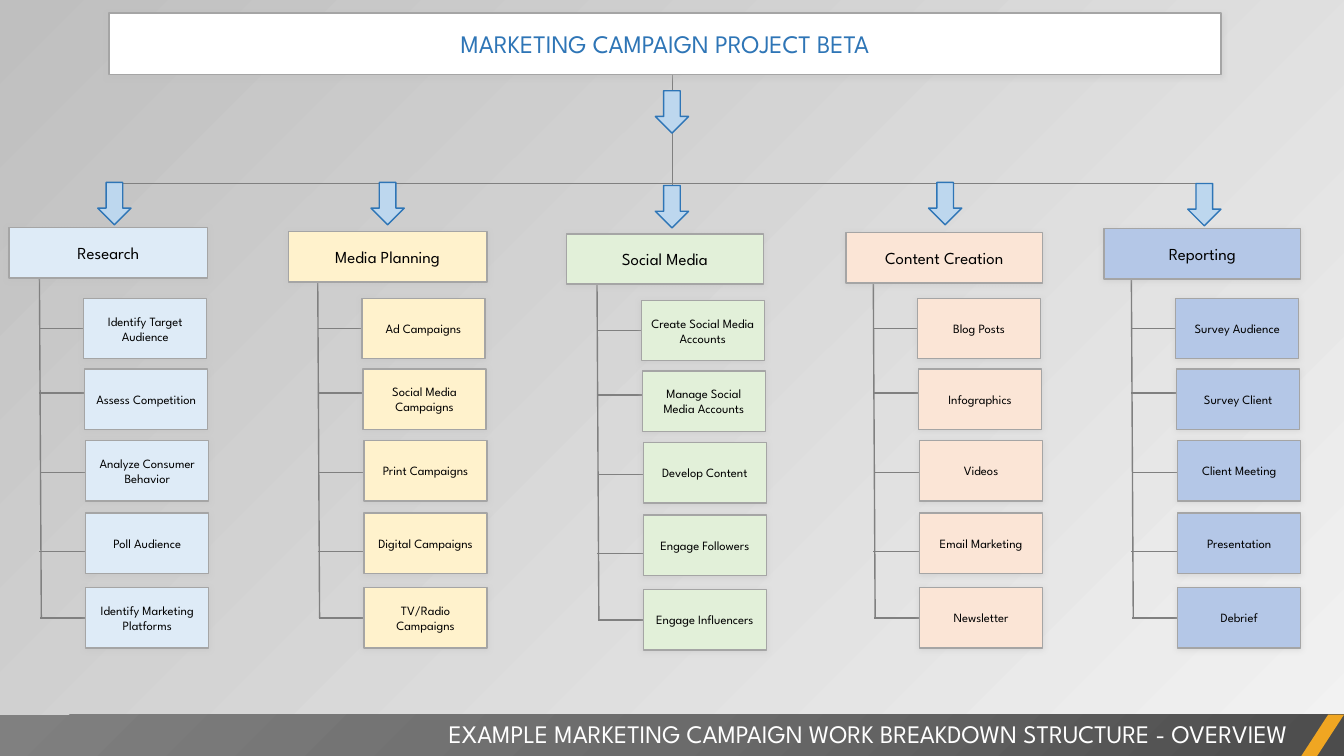
"""Build a work breakdown structure slide for a marketing campaign."""
import pptx
import pptx.dml.color
import pptx.enum.shapes
import pptx.enum.text
import pptx.oxml
import pptx.oxml.ns
import pptx.util

Inches, Pt = pptx.util.Inches, pptx.util.Pt
MSO = pptx.enum.shapes.MSO_SHAPE
ALIGN = pptx.enum.text.PP_ALIGN
ANCHOR = pptx.enum.text.MSO_ANCHOR

TITLE = "MARKETING CAMPAIGN PROJECT BETA"
FOOTER = "EXAMPLE MARKETING CAMPAIGN WORK BREAKDOWN STRUCTURE - OVERVIEW"
FONT = "League Spartan"
GREY, BORDER, BLUE, LIGHT_BLUE = "808080", "A5A5A5", "2E75B6", "BDD7EE"

COLUMNS = [
    dict(name="Research", color="DEEBF7", trunk=0.39, drop=0, head=(0.09, 2.26, 1.97), arrow=(0.97, 1.81),
         tasks=["Identify Target Audience", "Assess Competition", "Analyze Consumer Behavior",
                "Poll Audience", "Identify Marketing Platforms"]),
    dict(name="Media Planning", color="FFF2CC", trunk=3.15, drop=0, head=(2.86, 2.3, 1.97), arrow=(3.68, 1.81),
         tasks=["Ad Campaigns", "Social Media Campaigns", "Print Campaigns",
                "Digital Campaigns", "TV/Radio Campaigns"]),
    dict(name="Social Media", color="E2F0D9", trunk=5.92, drop=0.02, head=(5.62, 2.32, 1.95), arrow=(6.5, 1.84),
         tasks=["Create Social Media Accounts", "Manage Social Media Accounts", "Develop Content",
                "Engage Followers", "Engage Influencers"]),
    dict(name="Content Creation", color="FBE5D6", trunk=8.66, drop=0, head=(8.39, 2.31, 1.95), arrow=(9.21, 1.81),
         tasks=["Blog Posts", "Infographics", "Videos", "Email Marketing", "Newsletter"]),
    dict(name="Reporting", color="B4C7E7", trunk=11.22, drop=0, head=(10.95, 2.27, 1.95), arrow=(11.78, 1.82),
         tasks=["Survey Audience", "Survey Client", "Client Meeting", "Presentation", "Debrief"]),
]
TASK_DX = [0.44, 0.45, 0.46, 0.46, 0.46]
TASK_Y = [2.96, 3.66, 4.37, 5.09, 5.83]
BRANCH_DX = [0, 0, 0.01, 0, 0.01]
BRANCH_Y = [3.26, 3.9, 4.69, 5.47, 6.13]
TRUNK_TOP, TRUNK_LEAN, BRANCH_W = 2.52, 0.02, 0.9
TASK_W, TASK_H, HEAD_H = 1.22, 0.6, 0.5
ARROW_W, ARROW_H = 0.33, 0.42

NS = pptx.oxml.ns.nsdecls("a")
SHADOW = (f'<a:outerShdw {NS} blurRad="50800" dist="12700" dir="5400000" algn="t" rotWithShape="0">'
          '<a:srgbClr val="BFBFBF"><a:alpha val="40000"/></a:srgbClr></a:outerShdw>')
BACK_DIRECTION = '<a:lin ang="13500000" scaled="0"/>'
FOOTER_DIRECTION = '<a:path path="circle"><a:fillToRect l="100000" t="100000"/></a:path>'

prs = pptx.Presentation()
prs.slide_width, prs.slide_height = Inches(13.33), Inches(7.5)
s = prs.slides.add_slide(prs.slide_layouts[6])


def rgb(value):
    return pptx.dml.color.RGBColor.from_string(value)


def gradient(fill, element, stops, direction):
    fill.gradient()
    gs = "".join(f'<a:gs pos="{pos * 1000}"><a:srgbClr val="{color}"><a:alpha val="{alpha * 1000}"/>'
                 "</a:srgbClr></a:gs>" for pos, color, alpha in stops)
    old = element.xpath(".//a:gradFill")[0]
    old.getparent().replace(old, pptx.oxml.parse_xml(
        f'<a:gradFill {NS} rotWithShape="1"><a:gsLst>{gs}</a:gsLst>{direction}</a:gradFill>'))


def line(x1, y1, x2, y2):
    cn = s.shapes.add_connector(pptx.enum.shapes.MSO_CONNECTOR.STRAIGHT, *map(Inches, (x1, y1, x2, y2)))
    cn.line.color.rgb = rgb(GREY)
    cn.line.width = Pt(1)
    cn.element.spPr.append(pptx.oxml.parse_xml(f"<a:effectLst {NS}/>"))


def shape(kind, x, y, w, h, fill, border=None):
    sp = s.shapes.add_shape(kind, *map(Inches, (x, y, w, h)))
    sp.shadow.inherit = False
    sp.fill.solid()
    sp.fill.fore_color.rgb = rgb(fill)
    if border:
        sp.line.color.rgb = rgb(border)
        sp.line.width = Pt(1)
    else:
        sp.line.fill.background()
    return sp


def write(sp, text, size, color, align):
    sp.text_frame.word_wrap = True
    p = sp.text_frame.paragraphs[0]
    p.alignment = align
    r = p.add_run()
    r.text = text
    for key, value in dict(name=FONT, size=Pt(size)).items():
        setattr(r.font, key, value)
    r.font.color.rgb = rgb(color)


def box(x, y, w, h, fill, text, size, color="000000"):
    sp = shape(MSO.RECTANGLE, x, y, w, h, fill, BORDER)
    sp.element.spPr.xpath("a:effectLst")[0].append(pptx.oxml.parse_xml(SHADOW))
    sp.text_frame.vertical_anchor = ANCHOR.MIDDLE
    write(sp, text, size, color, ALIGN.CENTER)


def arrow(x, y):
    shape(MSO.DOWN_ARROW, x, y, ARROW_W, ARROW_H, LIGHT_BLUE, BLUE)


gradient(s.background.fill, s.element, [(0, "F2F2F2", 40), (100, "BFBFBF", 100)], BACK_DIRECTION)

line(6.67, 0.59, 6.67, 1.84)
box(1.08, 0.13, 11.03, 0.61, "FFFFFF", TITLE, 18, BLUE)
line(1.08, 1.82, 11.95, 1.82)
arrow(6.5, 0.9)

band = shape(MSO.RECTANGLE, 0, 7.09, 13.33, 0.42, GREY)
gradient(band.fill, band.element, [(0, "4C4C4C", 100), (50, "6B6B6B", 100), (100, GREY, 100)], FOOTER_DIRECTION)
accent = shape(MSO.PARALLELOGRAM, 12.9, 7.09, 0.43, 0.42, "F0A622")
accent.adjustments[0] = 0.65
footer = s.shapes.add_textbox(*map(Inches, (0.09, 7.08, 12.78, 0.4)))
write(footer, FOOTER, 18, "FFFFFF", ALIGN.RIGHT)
footer.text_frame.auto_size = pptx.enum.text.MSO_AUTO_SIZE.SHAPE_TO_FIT_TEXT

for col in COLUMNS:
    trunk, drop = col["trunk"], col["drop"]
    line(trunk, TRUNK_TOP + drop, trunk + TRUNK_LEAN, BRANCH_Y[-1] + drop)
    for dx, y in zip(BRANCH_DX, BRANCH_Y):
        line(trunk + dx, y + drop, trunk + dx + BRANCH_W, y + drop)
    for dx, y, task in zip(TASK_DX, TASK_Y, col["tasks"]):
        box(trunk + dx, y + drop, TASK_W, TASK_H, col["color"], task, 9)
    box(*col["head"], HEAD_H, col["color"], col["name"], 12)
    arrow(*col["arrow"])

prs.save("out.pptx")
